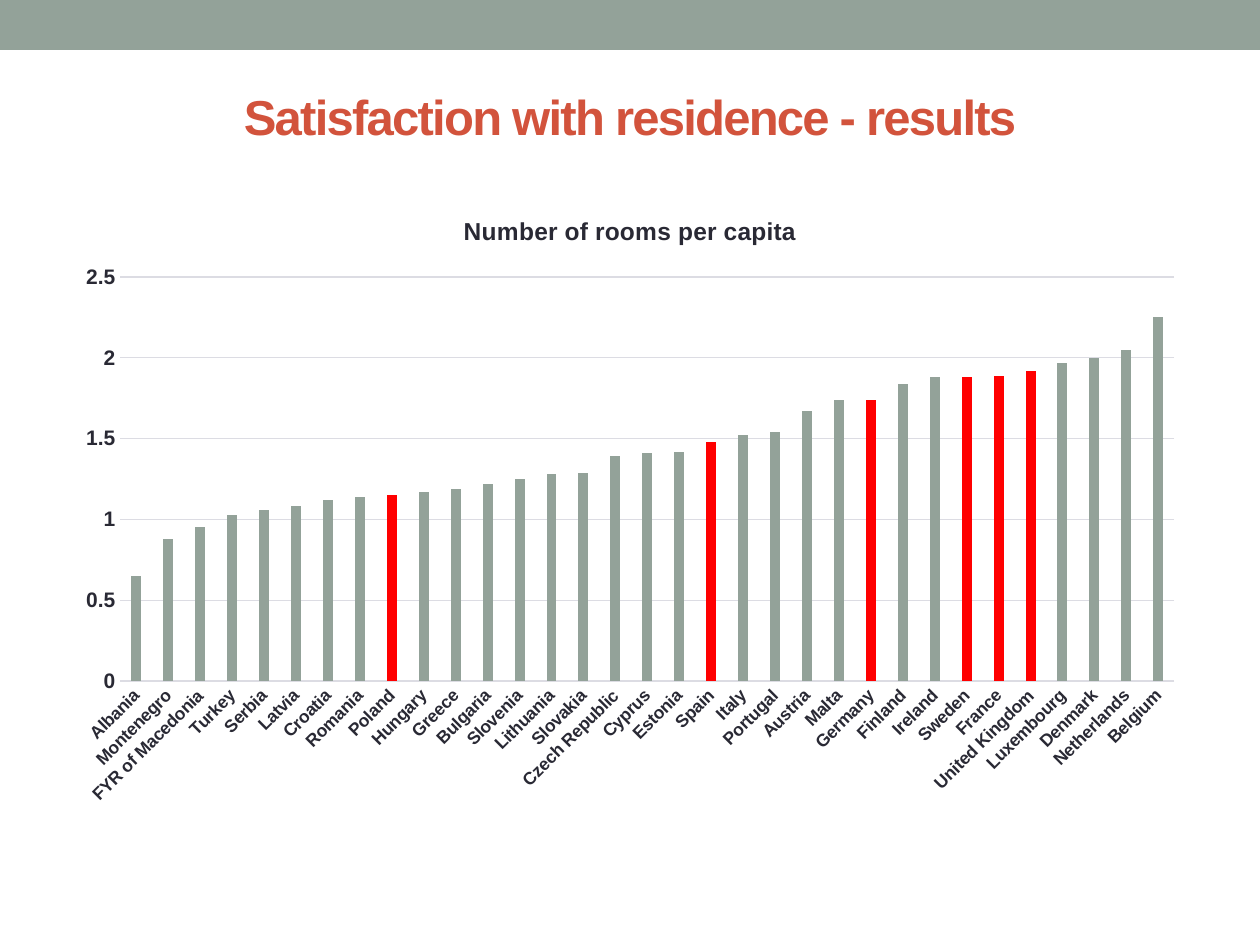
from dataclasses import dataclass

from pptx import Presentation
from pptx.chart.data import CategoryChartData
from pptx.dml.color import RGBColor
from pptx.enum.chart import XL_CHART_TYPE, XL_TICK_MARK
from pptx.enum.shapes import MSO_SHAPE
from pptx.enum.text import MSO_ANCHOR, PP_ALIGN
from pptx.util import Pt

COLUMNS = XL_CHART_TYPE.COLUMN_CLUSTERED
NO_TICK = XL_TICK_MARK.NONE
RECTANGLE = MSO_SHAPE.RECTANGLE
MIDDLE = MSO_ANCHOR.MIDDLE
CENTER = PP_ALIGN.CENTER
EMU_PER_PX = 914400 / 126


@dataclass(frozen=True)
class Theme:
    font: str = "Arial"
    sage: RGBColor = RGBColor(0x93, 0xA2, 0x99)
    rust: RGBColor = RGBColor(0xD2, 0x53, 0x3C)
    ink: RGBColor = RGBColor(0x29, 0x29, 0x34)
    grid: RGBColor = RGBColor(0xDC, 0xDC, 0xE3)
    highlight: RGBColor = RGBColor(0xFF, 0x00, 0x00)
    title_size: int = 28
    chart_title_size: int = 14
    value_size: int = 12
    category_size: int = 10


def px(*lengths):
    return [round(length * EMU_PER_PX) for length in lengths]


def style_font(font, size, color, bold=True):
    font.name = theme.font
    font.size = Pt(size)
    font.bold = bold
    font.color.rgb = color


theme = Theme()
rooms_per_capita = {
    "Albania": 0.65, "Montenegro": 0.88, "FYR of Macedonia": 0.95,
    "Turkey": 1.03, "Serbia": 1.06, "Latvia": 1.08, "Croatia": 1.12,
    "Romania": 1.14, "Poland": 1.15, "Hungary": 1.17, "Greece": 1.19,
    "Bulgaria": 1.22, "Slovenia": 1.25, "Lithuania": 1.28,
    "Slovakia": 1.29, "Czech Republic": 1.39, "Cyprus": 1.41,
    "Estonia": 1.42, "Spain": 1.48, "Italy": 1.52, "Portugal": 1.54,
    "Austria": 1.67, "Malta": 1.74, "Germany": 1.74, "Finland": 1.84,
    "Ireland": 1.88, "Sweden": 1.88, "France": 1.89,
    "United Kingdom": 1.92, "Luxembourg": 1.97, "Denmark": 2,
    "Netherlands": 2.05, "Belgium": 2.25,
}
highlighted = {"Poland", "Spain", "Germany", "Sweden", "France", "United Kingdom"}
chart_title = "Number of rooms per capita"

deck = Presentation()
deck.slide_width, deck.slide_height = px(1260, 945)
page = deck.slides.add_slide(deck.slide_layouts[5])

# Top band
band = page.shapes.add_shape(RECTANGLE, *px(0, 0, 1260, 50))
band.shadow.inherit = False
band.fill.solid()
band.fill.fore_color.rgb = theme.sage
band.line.fill.background()

# Slide title
title = page.shapes.title
title.left, title.top, title.width, title.height = px(63, 58, 1134, 115)
title.text_frame.vertical_anchor = MIDDLE
para = title.text_frame.paragraphs[0]
para.alignment = CENTER
span = para.add_run()
span.text = "Satisfaction with residence - results"
style_font(span.font, theme.title_size, theme.rust)
span._r.get_or_add_rPr().set("spc", "-100")

# Column chart
data = CategoryChartData()
data.categories = list(rooms_per_capita)
data.add_series(chart_title, list(rooms_per_capita.values()))
chart = page.shapes.add_chart(COLUMNS, *px(63, 192, 1134, 625), data).chart
style_font(chart.font, theme.category_size, theme.ink, bold=False)
chart.has_legend = False
chart.has_title = True
chart.chart_title.include_in_layout = False
span = chart.chart_title.text_frame.paragraphs[0].add_run()
span.text = chart_title
style_font(span.font, theme.chart_title_size, theme.ink)

# Columns, with the highlighted countries
plot = chart.plots[0]
plot.gap_width = 219
plot.overlap = -27
plot.vary_by_categories = False
series = plot.series[0]
series.invert_if_negative = False
series.format.fill.solid()
series.format.fill.fore_color.rgb = theme.sage
for index, country in enumerate(rooms_per_capita):
    if country in highlighted:
        fill = series.points[index].format.fill
        fill.solid()
        fill.fore_color.rgb = theme.highlight

# Axes
countries, rooms = chart.category_axis, chart.value_axis
for axis, size in ((countries, theme.category_size), (rooms, theme.value_size)):
    axis.major_tick_mark = NO_TICK
    axis.minor_tick_mark = NO_TICK
    style_font(axis.tick_labels.font, size, theme.ink)
rooms.minimum_scale = 0
rooms.maximum_scale = 2.5
rooms.major_unit = 0.5
rooms.has_major_gridlines = True
rooms.format.line.fill.background()
for line in (countries.format.line, rooms.major_gridlines.format.line):
    line.color.rgb = theme.grid
    line.width = Pt(0.75)

# Slanted country names
countries._element.txPr.bodyPr.set("rot", "-2700000")

deck.save("out.pptx")
